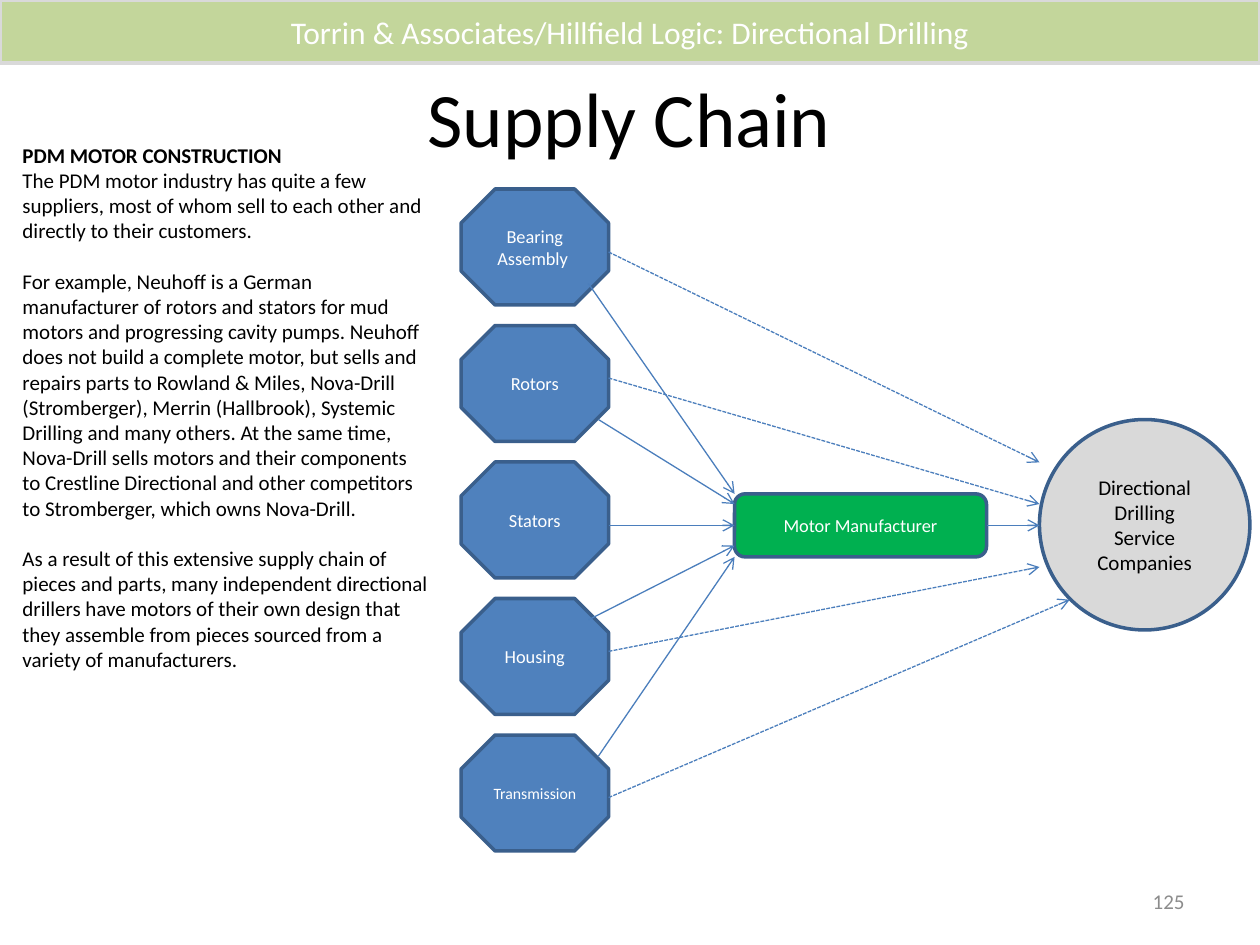
from lxml import etree
from pptx import Presentation
from pptx.dml.color import RGBColor
from pptx.enum import dml, shapes, text
from pptx.oxml import ns
from pptx.util import Inches, Pt

COLORS = {
    "header": "C3D69B", "gray": "D9D9D9", "blue": "4F81BD", "outline": "3A5F8C",
    "green": "00B050", "arrow": "4B7EBC", "white": "FFFFFF", "black": "000000",
    "number": "8C8C8C",
}
ALIGN = text.PP_ALIGN
ANCHOR = text.MSO_ANCHOR
SHAPE = shapes.MSO_SHAPE


def rgb(name):
    return RGBColor.from_string(COLORS[name])


def write(p, content, size=12, color="black", bold=False, align=ALIGN.LEFT, before=0):
    p.alignment = align
    p.space_before = Pt(before)
    r = p.add_run()
    r.text = content
    r.font.name = "Calibri"
    r.font.size = Pt(size)
    r.font.bold = bold
    r.font.color.rgb = rgb(color)


class Board:
    def __init__(self, slide, line_width=2, arrow_width=0.75):
        self.slide = slide
        self.line_width = Pt(line_width)
        self.arrow_width = Pt(arrow_width)

    def text_box(self, box, paragraphs, anchor=ANCHOR.MIDDLE):
        sp = self.slide.shapes.add_textbox(*map(Inches, box))
        tf = sp.text_frame
        tf.word_wrap = True
        tf.vertical_anchor = anchor
        for i, (content, fmt) in enumerate(paragraphs):
            p = tf.add_paragraph() if i else tf.paragraphs[0]
            write(p, content, **fmt)
        return sp

    def shape(self, kind, box, label, fill, line="outline", size=10.5, color="white"):
        sp = self.slide.shapes.add_shape(kind, *map(Inches, box))
        sp.shadow.inherit = False
        sp.fill.solid()
        sp.fill.fore_color.rgb = rgb(fill)
        sp.line.color.rgb = rgb(line)
        sp.line.width = self.line_width
        tf = sp.text_frame
        tf.word_wrap = True
        tf.vertical_anchor = ANCHOR.MIDDLE
        write(tf.paragraphs[0], label, size=size, color=color, align=ALIGN.CENTER)
        return sp

    def arrow(self, start, end, dashed=False):
        c = self.slide.shapes.add_connector(
            shapes.MSO_CONNECTOR.STRAIGHT, *map(Inches, (*start, *end)))
        c.line.color.rgb = rgb("arrow")
        c.line.width = self.arrow_width
        if dashed:
            c.line.dash_style = dml.MSO_LINE.SQUARE_DOT
        ln = c.line._get_or_add_ln()
        etree.SubElement(ln, ns.qn("a:tailEnd"), type="arrow")
        etree.SubElement(c._element.spPr, ns.qn("a:effectLst"))
        return c


def main():
    prs = Presentation()
    prs.slide_width, prs.slide_height = Inches(10), Inches(7.5)
    s = prs.slides.add_slide(prs.slide_layouts[6])
    board = Board(s)

    board.text_box((0.33, 0.3, 9.33, 1.25),
                   [("Supply Chain", {"size": 44, "align": ALIGN.CENTER})])
    board.text_box((7.17, 6.95, 2.33, 0.4),
                   [("125", {"color": "number", "align": ALIGN.RIGHT})])
    board.text_box((0.08, 1.08, 3.42, 4.54), [
        ("PDM MOTOR CONSTRUCTION", {"bold": True}),
        ("The PDM motor industry has quite a few suppliers, most of whom sell to "
         "each other and directly to their customers.", {}),
        ("For example, Neuhoff is a German manufacturer of rotors and stators for "
         "mud motors and progressing cavity pumps. Neuhoff does not build a "
         "complete motor, but sells and repairs parts to Rowland & Miles, "
         "Nova-Drill (Stromberger), Merrin (Hallbrook), Systemic Drilling and "
         "many others. At the same time, Nova-Drill sells motors and their "
         "components to Crestline Directional and other competitors to "
         "Stromberger, which owns Nova-Drill.", {"before": 14.4}),
        ("As a result of this extensive supply chain of pieces and parts, many "
         "independent directional drillers have motors of their own design that "
         "they assemble from pieces sourced from a variety of manufacturers.",
         {"before": 14.4}),
    ], anchor=ANCHOR.TOP)

    parts = [("Bearing Assembly ", 10.5), ("Rotors", 10.5), ("Stators", 10.5),
             ("Housing", 10.5), ("Transmission", 9)]
    pitch = 13 / 12
    for i, (label, size) in enumerate(parts):
        board.shape(SHAPE.OCTAGON, (3.66, 1.5 + i * pitch, 1.17, 0.92),
                    label, "blue", size=size)
    motor = board.shape(SHAPE.ROUNDED_RECTANGLE, (5.83, 3.92, 2, 0.5),
                        "Motor Manufacturer", "green")
    board.shape(SHAPE.OVAL, (8.25, 3.33, 1.67, 1.67),
                "Directional Drilling Service Companies", "gray",
                size=12, color="black")

    to_motor = [((4.67, 2.25), 3.92), ((4.75, 3.33), 4), ((4.67, 4.92), 4.33),
                ((4.75, 6), 4.42)]
    for start, y in to_motor:
        board.arrow(start, (5.83, y))
    board.arrow((4.83, 4.17), (5.83, 4.17)).end_connect(motor, 1)
    board.arrow((7.83, 4.17), (8.25, 4.17)).begin_connect(motor, 3)

    to_service = [(2, (8.25, 3.67)), (3, (8.25, 4)), (5.17, (8.25, 4.5)),
                  (6.33, (8.49, 4.76))]
    for y, end in to_service:
        board.arrow((4.83, y), end, dashed=True)

    board.shape(SHAPE.RECTANGLE, (0, 0, 10, 0.5),
                "Torrin & Associates/Hillfield Logic: Directional Drilling",
                "header", line="gray", size=18)
    prs.save("out.pptx")


if __name__ == "__main__":
    main()
